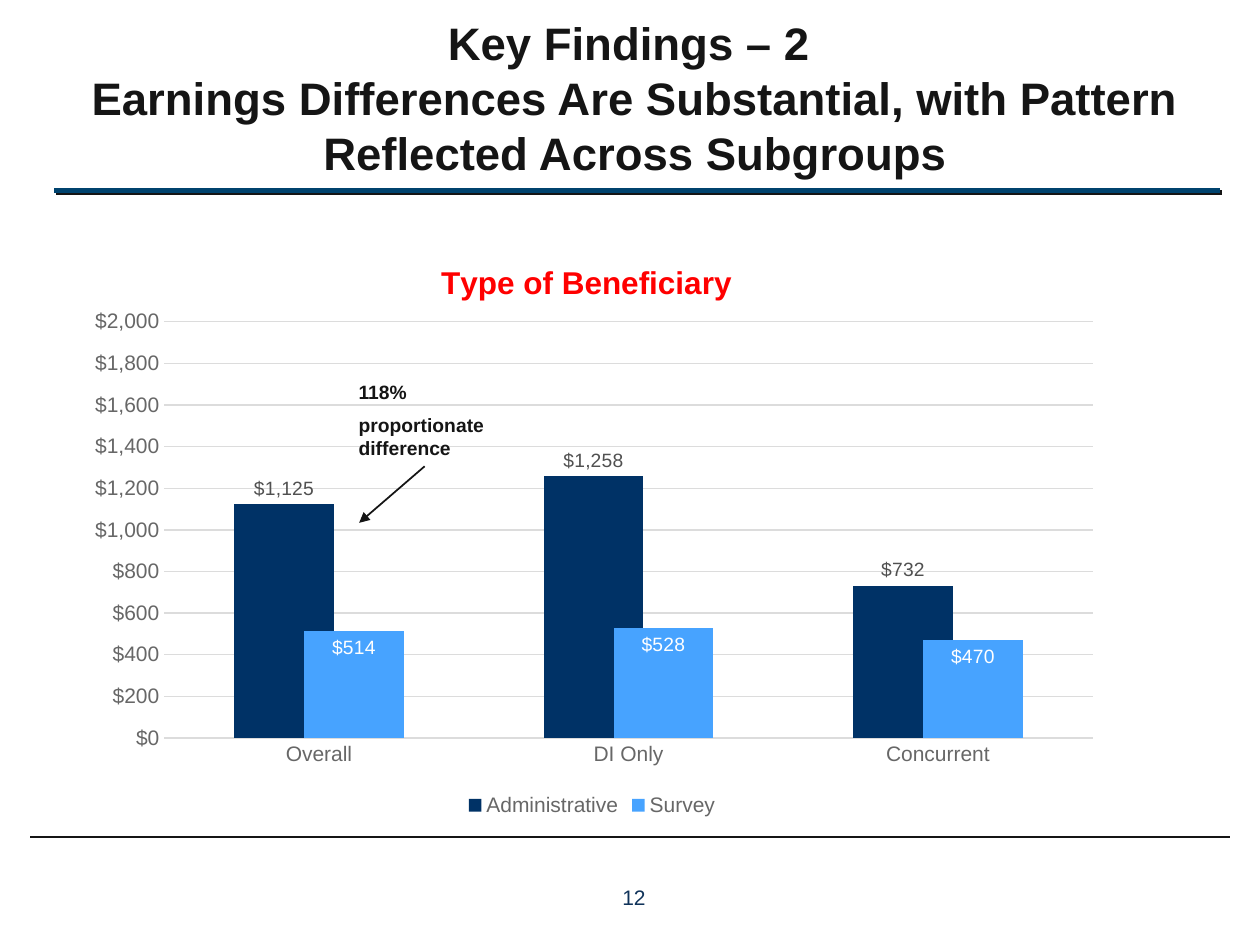
from dataclasses import dataclass
from typing import Any

import pptx
import pptx.chart.data
import pptx.dml.color
import pptx.enum.chart
import pptx.enum.shapes
import pptx.enum.text
import pptx.oxml
import pptx.oxml.ns
import pptx.util

Cm = pptx.util.Cm
Pt = pptx.util.Pt
RGB = pptx.dml.color.RGBColor
Mark = pptx.enum.chart.XL_TICK_MARK
Spot = pptx.enum.chart.XL_LABEL_POSITION
Align = pptx.enum.text.PP_ALIGN

INK = RGB(0x15, 0x15, 0x15)
TEAL = RGB(0x00, 0x43, 0x6E)
BLUE = RGB(0x10, 0x33, 0x5A)
RED = RGB(0xFF, 0x00, 0x00)
GREY = RGB(0x67, 0x67, 0x67)
DARK = RGB(0x50, 0x50, 0x50)
PALE = RGB(0xDC, 0xDC, 0xDC)
NAVY = RGB(0x00, 0x32, 0x66)
SKY = RGB(0x47, 0xA3, 0xFF)
WHITE = RGB(0xFF, 0xFF, 0xFF)
MONEY = '"$"#,##0'


@dataclass
class Rule:
    start: tuple[float, float]
    end: tuple[float, float]
    color: RGB
    width: float
    shade: bool = False
    arrow: bool = False


@dataclass
class Bar:
    name: str
    vals: tuple[int, ...]
    fill: RGB
    text: RGB
    spot: Any


RULES = (
    Rule((1.09, 3.84), (24.59, 3.84), TEAL, 3, shade=True),
    Rule((0.61, 16.87), (24.79, 16.87), INK, 1.5),
)
POINTER = Rule((8.56, 9.4), (7.24, 10.54), INK, 1, arrow=True)
CATS = ("Overall", "DI Only", "Concurrent")
BARS = (
    Bar("Administrative", (1125, 1258, 732), NAVY, DARK, Spot.OUTSIDE_END),
    Bar("Survey", (514, 528, 470), SKY, WHITE, Spot.INSIDE_END),
)


def apply(item: Any, **vals: Any) -> None:
    for key, val in vals.items():
        setattr(item, key, val)


def style(font: Any, size: float, color: RGB, bold: bool = False) -> None:
    apply(font, name="Arial", size=Pt(size), bold=bold)
    font.color.rgb = color


def stroke(line: Any, color: RGB, width: float) -> None:
    line.color.rgb = color
    line.width = Pt(width)


def xml(tag: str, body: str = "", attrs: str = "") -> Any:
    space = pptx.oxml.ns.nsdecls(tag.split(":")[0])
    return pptx.oxml.parse_xml(f"<{tag} {space} {attrs}>{body}</{tag}>")


def draw(shapes: Any, rule: Rule) -> None:
    ends = [Cm(val) for val in rule.start + rule.end]
    line = shapes.add_connector(pptx.enum.shapes.MSO_CONNECTOR.STRAIGHT, *ends)
    stroke(line.line, rule.color, rule.width)
    if rule.arrow:
        line.line._get_or_add_ln().append(xml("a:tailEnd", attrs='type="triangle"'))
    shade = (
        f'<a:outerShdw dist="{Pt(1.4)}" dir="2700000" algn="ctr" rotWithShape="0">'
        f'<a:srgbClr val="{INK}"/></a:outerShdw>'
    )
    line._element.spPr.append(xml("a:effectLst", shade if rule.shade else ""))


def write(shapes: Any, box: tuple[float, ...], lines: tuple[str, ...], size: float,
          color: RGB, bold: bool, align: Any, wrap: bool) -> None:
    frame = shapes.add_textbox(*map(Cm, box)).text_frame
    frame.word_wrap = wrap
    frame.text = "\n".join(lines)
    for num, para in enumerate(frame.paragraphs):
        para.alignment = align
        if num:
            para.space_before = Pt(size / 2)
        style(para.runs[0].font, size, color, bold)


def place(holder: Any, inner: bool = False, **sides: float) -> None:
    body = '<c:layoutTarget val="inner"/>' if inner else ""
    body += '<c:xMode val="edge"/><c:yMode val="edge"/>'
    body += "".join(f'<c:{key} val="{val}"/>' for key, val in sides.items())
    for old in holder.findall(pptx.oxml.ns.qn("c:layout")):
        holder.remove(old)
    node = xml("c:layout", f"<c:manualLayout>{body}</c:manualLayout>")
    holder.insert(0 if inner else 1, node)


def plot(shapes: Any) -> None:
    data = pptx.chart.data.CategoryChartData(number_format=MONEY)
    data.categories = CATS
    for bar in BARS:
        data.add_series(bar.name, bar.vals)
    kind = pptx.enum.chart.XL_CHART_TYPE.COLUMN_CLUSTERED
    box = map(Cm, (1.42, 4.57, 21.03, 11.99))
    chart = shapes.add_chart(kind, *box, data).chart
    style(chart.font, 10, INK)

    head = chart.chart_title
    head.text_frame.text = "Type of Beneficiary"
    style(head.text_frame.paragraphs[0].runs[0].font, 18, RED, True)
    head.include_in_layout = False
    place(head._element, x=0.35, y=0.05)
    place(chart._chartSpace.chart.plotArea, True, x=0.09, y=0.16, w=0.89, h=0.7)

    chart.has_legend = True
    apply(chart.legend, position=pptx.enum.chart.XL_LEGEND_POSITION.BOTTOM,
          include_in_layout=False)
    style(chart.legend.font, 12, GREY)

    for axis in (chart.category_axis, chart.value_axis):
        apply(axis, major_tick_mark=Mark.NONE, minor_tick_mark=Mark.NONE)
        style(axis.tick_labels.font, 12, GREY)
    stroke(chart.category_axis.format.line, PALE, 0.75)
    scale = chart.value_axis
    apply(scale, minimum_scale=0, maximum_scale=2000, major_unit=200)
    apply(scale.tick_labels, number_format=MONEY, number_format_is_linked=False)
    scale.format.line.fill.background()
    stroke(scale.major_gridlines.format.line, PALE, 0.75)

    apply(chart.plots[0], gap_width=140, overlap=30, vary_by_categories=False)
    for bar, row in zip(BARS, chart.plots[0].series):
        row.format.fill.solid()
        row.format.fill.fore_color.rgb = bar.fill
        tags = row.data_labels
        apply(tags, show_value=True, position=bar.spot, number_format=MONEY,
              number_format_is_linked=False)
        style(tags.font, 11, bar.text)


def main() -> None:
    deck = pptx.Presentation()
    apply(deck, slide_width=Cm(25.4), slide_height=Cm(19.05))
    slide = deck.slides.add_slide(deck.slide_layouts[5])
    shapes = slide.shapes

    title = shapes.title
    apply(title, left=Cm(1.07), top=Cm(0.56), width=Cm(23.47), height=Cm(3.18))
    frame = title.text_frame
    frame.text = ("Key Findings – 2 \vEarnings Differences Are Substantial, "
                  "with Pattern Reflected Across Subgroups")
    apply(frame, word_wrap=True, auto_size=pptx.enum.text.MSO_AUTO_SIZE.NONE,
          vertical_anchor=pptx.enum.text.MSO_ANCHOR.BOTTOM)
    para = frame.paragraphs[0]
    para.alignment = Align.CENTER
    for run in para.runs:
        style(run.font, 26, INK, True)

    for rule in RULES:
        draw(shapes, rule)
    write(shapes, (11.51, 17.7, 2.54, 0.97), ("12",), 12, BLUE, False,
          Align.CENTER, False)
    plot(shapes)
    note = shapes.add_group_shape().shapes
    write(note, (6.98, 7.54, 3.18, 1.45), ("118%", "proportionate difference"),
          11, INK, True, Align.LEFT, True)
    draw(note, POINTER)
    deck.save("out.pptx")


if __name__ == "__main__":
    main()
